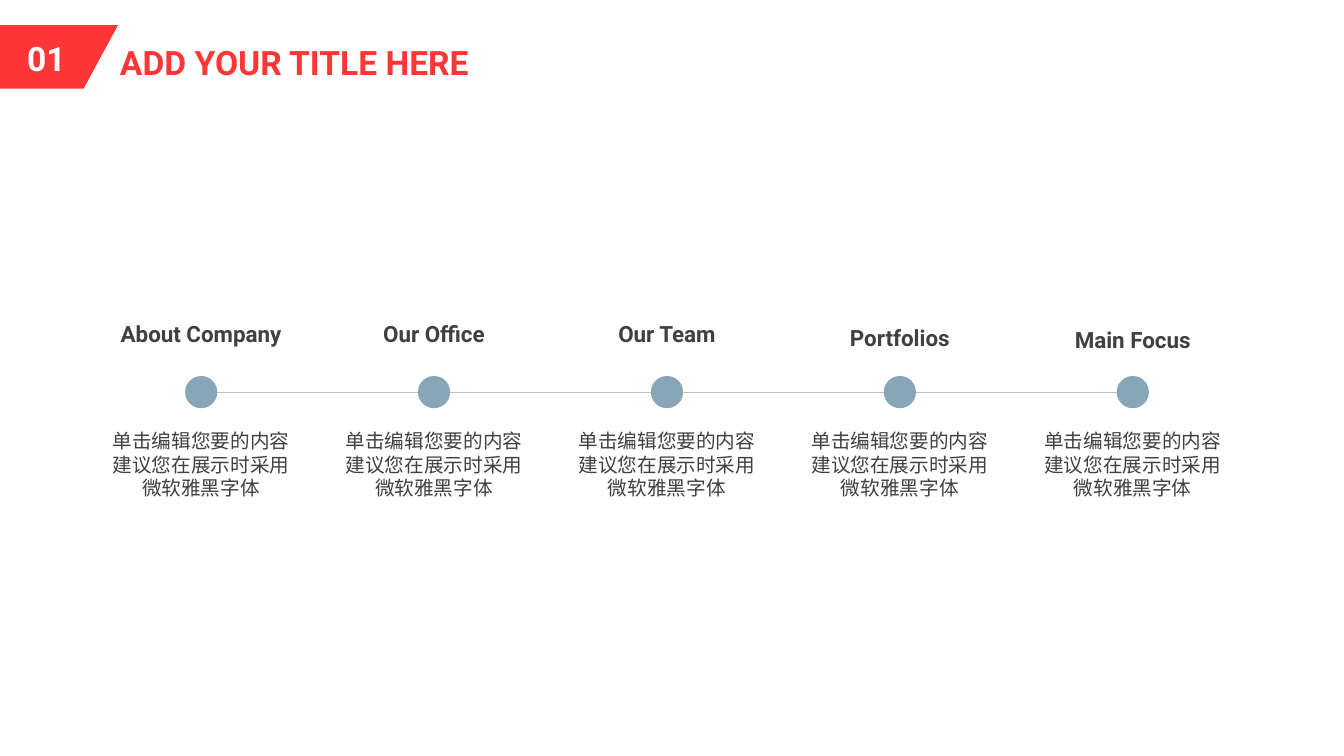
from dataclasses import dataclass

import lxml.etree
import pptx
import pptx.dml.color
import pptx.enum.shapes
import pptx.enum.text
import pptx.oxml.ns
import pptx.util

Inches = pptx.util.Inches
Align = pptx.enum.text.PP_ALIGN


@dataclass(frozen=True)
class Theme:
    font: str = "Roboto"
    accent: str = "FF3636"
    dot: str = "87A7B9"
    line: str = "BFBFBF"
    text: str = "404040"
    white: str = "FFFFFF"
    title_size: int = 24
    heading_size: int = 16
    body_size: int = 14
    line_width: float = 0.5


THEME = Theme()
BODY = "单击编辑您要的内容建议您在展示时采用微软雅黑字体"
# Each milestone: heading and how far it sits below the common heading line
MILESTONES = [
    ("About Company", 0),
    ("Our Office", 0),
    ("Our Team", 0),
    ("Portfolios", 0.04),
    ("Main Focus", 0.06),
]


def rgb(value):
    return pptx.dml.color.RGBColor.from_string(value)


def paint(shape, color):
    shape.shadow.inherit = False
    shape.fill.solid()
    shape.fill.fore_color.rgb = rgb(color)
    shape.line.fill.background()


def write(shape, text, size, color, bold=False, align=Align.LEFT, wrap=True):
    frame = shape.text_frame
    frame.text = text
    frame.word_wrap = wrap
    frame.auto_size = pptx.enum.text.MSO_AUTO_SIZE.NONE
    frame.vertical_anchor = pptx.enum.text.MSO_ANCHOR.TOP
    paragraph = frame.paragraphs[0]
    paragraph.alignment = align
    font = paragraph.runs[0].font
    font.name, font.size, font.bold = THEME.font, pptx.util.Pt(size), bold
    font.color.rgb = rgb(color)
    # East Asian characters use the same typeface
    properties = paragraph.runs[0]._r.get_or_add_rPr()
    east_asian = lxml.etree.Element(pptx.oxml.ns.qn("a:ea"), typeface=THEME.font)
    properties.find(pptx.oxml.ns.qn("a:latin")).addnext(east_asian)


def add_text(slide, left, top, width, height, text, size, color, **style):
    box = slide.shapes.add_textbox(
        Inches(left), Inches(top), Inches(width), Inches(height))
    write(box, text, size, color, **style)


def add_header(slide, left, top, width, height, number, title):
    # Slanted number tab
    tab_width, slant = 1.17, 0.34
    builder = slide.shapes.build_freeform(
        Inches(left), Inches(top), scale=1.0)
    builder.add_line_segments([
        (Inches(left + tab_width), Inches(top)),
        (Inches(left + tab_width - slant), Inches(top + height)),
        (Inches(left), Inches(top + height)),
    ], close=True)
    paint(builder.convert_to_shape(), THEME.accent)
    add_text(slide, left + 0.17, top + 0.08, 0.63, 0.5, number,
             THEME.title_size, THEME.white, bold=True)

    # Title
    placeholder = slide.shapes.title
    title_left = left + 1.09
    placeholder.left, placeholder.top = Inches(title_left), Inches(top + 0.12)
    placeholder.width = Inches(left + width - title_left)
    placeholder.height = Inches(0.5)
    write(placeholder, title, THEME.title_size, THEME.accent, bold=True)


def add_link(slide, start, end, y):
    link = slide.shapes.add_connector(
        pptx.enum.shapes.MSO_CONNECTOR.STRAIGHT,
        Inches(start), Inches(y), Inches(end), Inches(y))
    link.line.color.rgb = rgb(THEME.line)
    link.line.width = pptx.util.Pt(THEME.line_width)
    lxml.etree.SubElement(
        link._element.spPr, pptx.oxml.ns.qn("a:effectLst"))


def add_timeline(slide, left, top, width, milestones):
    column, diameter = 2.07, 0.32
    radius = diameter / 2
    pitch = (width - column) / (len(milestones) - 1)
    line_y = top + 0.76
    for index, (heading, drop) in enumerate(milestones):
        column_left = left + index * pitch
        center = column_left + column / 2

        # Heading
        add_text(slide, column_left, top + drop, column, 0.37, heading,
                 THEME.heading_size, THEME.text, bold=True,
                 align=Align.CENTER, wrap=False)

        # Dot and link to the next dot
        dot = slide.shapes.add_shape(
            pptx.enum.shapes.MSO_SHAPE.OVAL,
            Inches(center - radius), Inches(line_y - radius),
            Inches(diameter), Inches(diameter))
        paint(dot, THEME.dot)
        if index < len(milestones) - 1:
            add_link(slide, center + radius, center + pitch - radius, line_y)

        # Description
        add_text(slide, column_left, top + 1.08, column, 0.81, BODY,
                 THEME.body_size, THEME.text, align=Align.CENTER)


def main():
    presentation = pptx.Presentation()
    presentation.slide_width = Inches(13.33)
    presentation.slide_height = Inches(7.5)
    slide = presentation.slides.add_slide(presentation.slide_layouts[5])
    add_header(slide, 0, 0.25, 5.23, 0.63, "01", "ADD YOUR TITLE HERE")
    add_timeline(slide, 0.96, 3.13, 11.31, MILESTONES)
    presentation.save("out.pptx")


if __name__ == "__main__":
    main()
